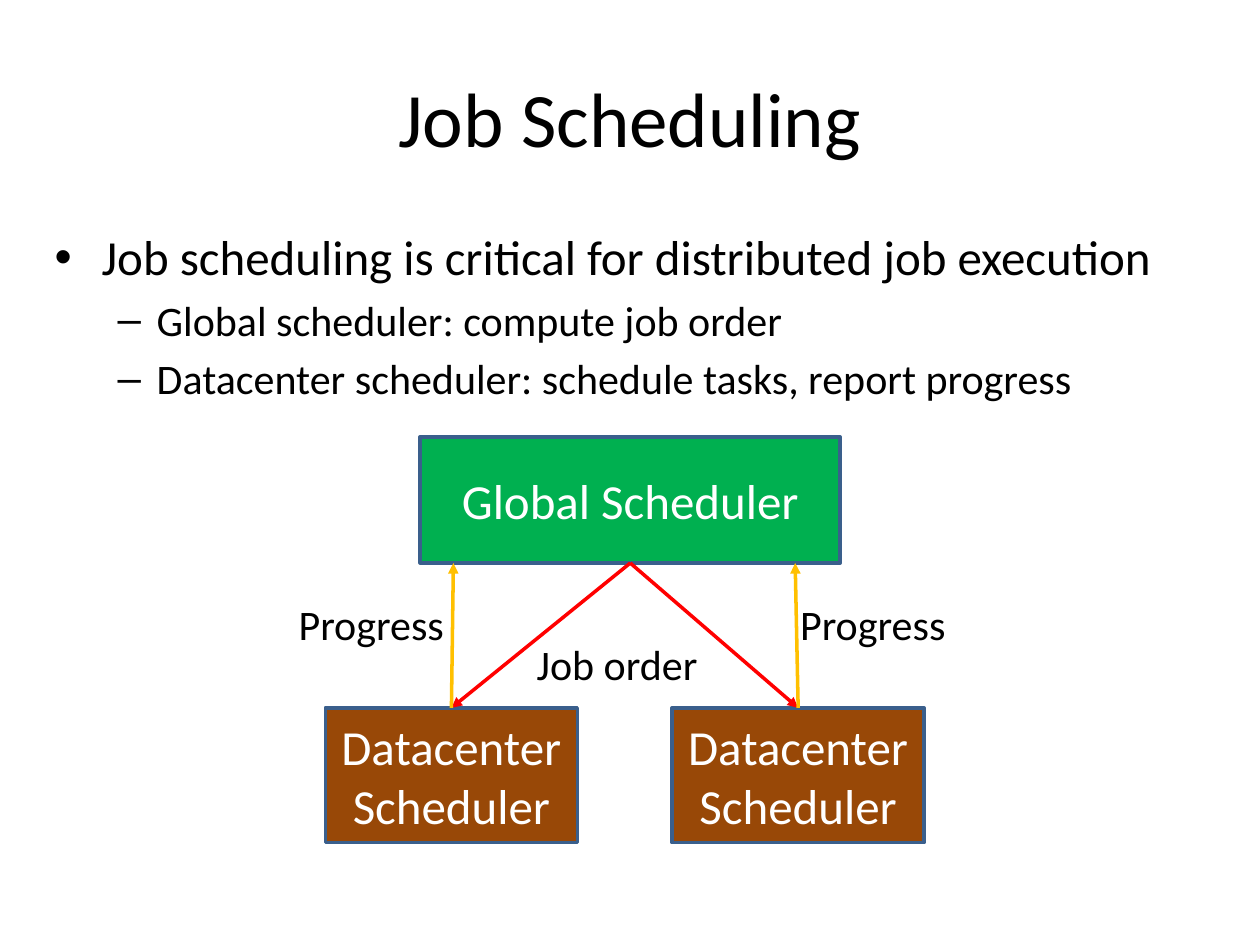
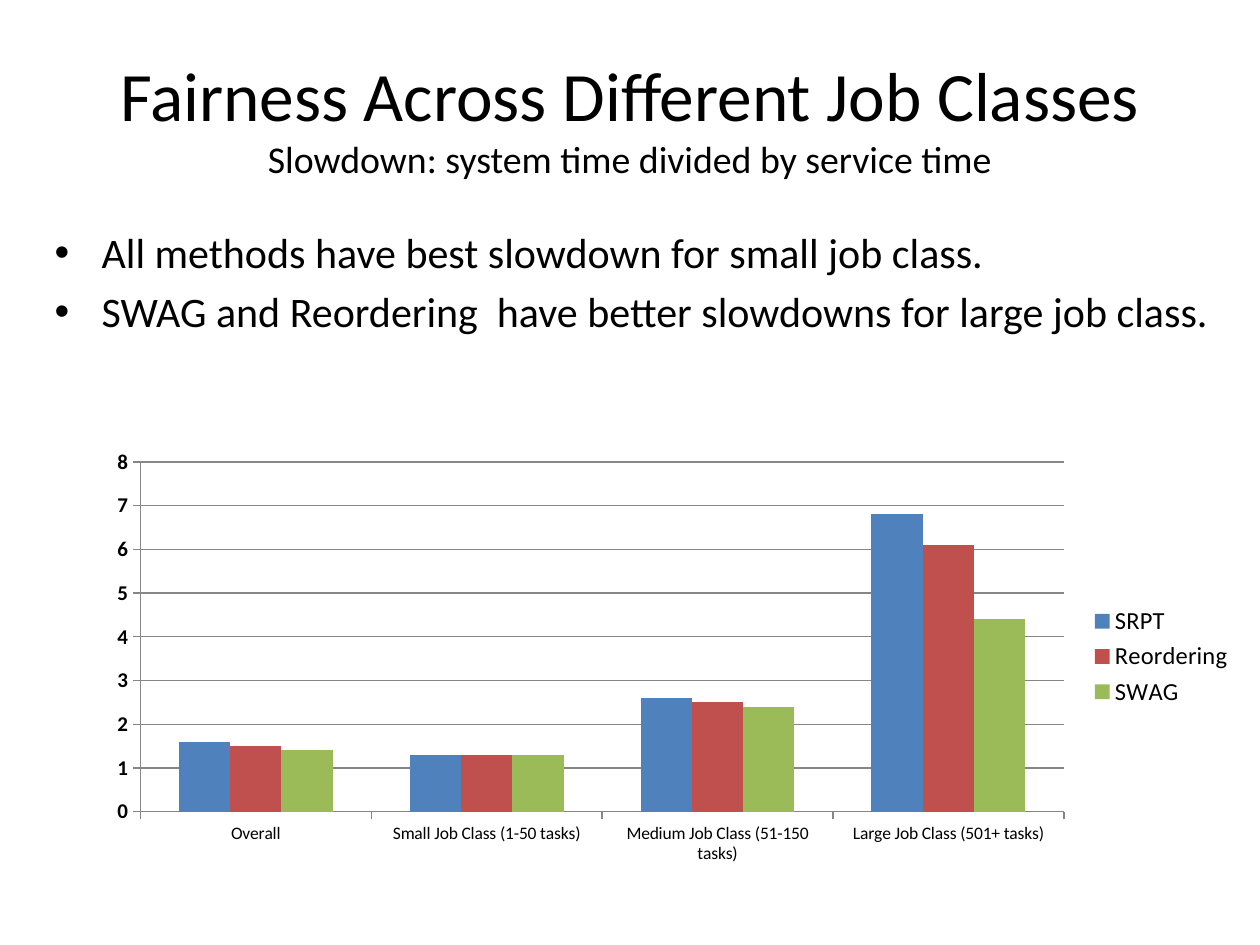
from dataclasses import dataclass

from lxml import etree
from pptx import Presentation
from pptx import util as u
from pptx.chart.data import CategoryChartData
from pptx.dml.color import RGBColor
from pptx.enum import chart as ch
from pptx.enum import shapes, text
from pptx.oxml import ns


@dataclass(frozen=True)
class Theme:
    font: str = "Calibri"
    ink: str = "000000"
    white: str = "FFFFFF"
    outline: str = "3A5F8C"
    global_fill: str = "00B050"
    datacenter_fill: str = "984807"
    order: str = "FF0000"
    progress: str = "FFC000"
    grid: str = "868686"
    series: tuple[str, ...] = ("4F81BD", "C0504D", "9BBB59")
    title: float = 44
    long_title: float = 39.6
    subtitle: float = 21.6
    lead: float = 28
    body: float = 24
    legend: float = 14
    value: float = 12
    category: float = 10
    line: float = 2


@dataclass(frozen=True)
class Area:
    """Left, top, width and height in centimetres."""
    x: float
    y: float
    w: float
    h: float

    def emu(self) -> tuple[u.Cm, ...]:
        return tuple(u.Cm(v) for v in (self.x, self.y, self.w, self.h))


@dataclass(frozen=True)
class Line:
    text: str
    size: float


@dataclass(frozen=True)
class Bullet:
    text: str
    size: float
    level: int = 0


@dataclass(frozen=True)
class Box:
    text: str
    area: Area
    fill: str


@dataclass(frozen=True)
class Label:
    text: str
    area: Area


@dataclass(frozen=True)
class BulletStyle:
    mark: str
    margin: float
    hang: float


T = Theme()
TITLE_AREA = Area(1.27, 0.76, 22.86, 3.18)
BULLETS = (BulletStyle("•", 0.95, 0.95), BulletStyle("–", 2.06, 0.79))


def set_all(obj, values: dict) -> None:
    for name, value in values.items():
        setattr(obj, name, value)


def set_font(font, size: float, color: str = T.ink, bold: bool = False) -> None:
    set_all(font, {"name": T.font, "size": u.Pt(size), "bold": bold})
    font.color.rgb = RGBColor.from_string(color)


def add_run(p, content: str, size: float, color: str = T.ink) -> None:
    r = p.add_run()
    r.text = content
    set_font(r.font, size, color)


def set_line(line, color: str, width: float = T.line) -> None:
    line.color.rgb = RGBColor.from_string(color)
    line.width = u.Pt(width)


def sub(parent, tag: str, **attrs: str):
    return etree.SubElement(parent, ns.qn(tag), attrs)


def add_slide(prs, lines: list[Line]):
    """Add a title-only slide; title lines are parted by line breaks."""
    s = prs.slides.add_slide(prs.slide_layouts[5])
    sp = s.shapes.title
    set_all(sp, dict(zip(("left", "top", "width", "height"), TITLE_AREA.emu())))
    tf = sp.text_frame
    set_all(tf, {"auto_size": text.MSO_AUTO_SIZE.NONE,
                 "vertical_anchor": text.MSO_ANCHOR.MIDDLE})
    p = tf.paragraphs[0]
    p.alignment = text.PP_ALIGN.CENTER
    for i, line in enumerate(lines):
        if i:
            p.add_line_break()
            sub(p._p[-1], "a:rPr", sz=str(round(lines[i - 1].size * 100)))
        add_run(p, line.text, line.size)
    return s


def add_text_frame(s, area: Area):
    tf = s.shapes.add_textbox(*area.emu()).text_frame
    tf.word_wrap = True
    return tf


def add_bullets(s, area: Area, bullets: list[Bullet]) -> None:
    tf = add_text_frame(s, area)
    for i, bullet in enumerate(bullets):
        p = tf.add_paragraph() if i else tf.paragraphs[0]
        p.level = bullet.level
        style = BULLETS[bullet.level]
        ppr = p._p.get_or_add_pPr()
        ppr.set("marL", str(u.Cm(style.margin)))
        ppr.set("indent", str(-u.Cm(style.hang)))
        sub(sub(ppr, "a:spcBef"), "a:spcPct", val="20000")
        sub(ppr, "a:buFont", typeface="Arial")
        sub(ppr, "a:buChar", char=style.mark)
        add_run(p, bullet.text, bullet.size)


def add_box(s, box: Box):
    sp = s.shapes.add_shape(shapes.MSO_SHAPE.RECTANGLE, *box.area.emu())
    sp.shadow.inherit = False
    sp.fill.solid()
    sp.fill.fore_color.rgb = RGBColor.from_string(box.fill)
    set_line(sp.line, T.outline)
    tf = sp.text_frame
    set_all(tf, {"word_wrap": True, "vertical_anchor": text.MSO_ANCHOR.MIDDLE})
    p = tf.paragraphs[0]
    p.alignment = text.PP_ALIGN.CENTER
    add_run(p, box.text, T.lead, T.white)
    return sp


def add_arrow(s, color: str, start, start_site: int, x: int = 0, y: int = 0,
              end=None, end_site: int = 0) -> None:
    """Draw an arrow from a box side to another box, or to the point x, y."""
    c = s.shapes.add_connector(shapes.MSO_CONNECTOR.STRAIGHT, x, y, x, y)
    c.begin_connect(start, start_site)
    if end is not None:
        c.end_connect(end, end_site)
    set_line(c.line, color)
    sub(c.line._get_or_add_ln(), "a:tailEnd", type="triangle")
    sub(c._element.spPr, "a:effectLst")


def add_label(s, label: Label) -> None:
    tf = add_text_frame(s, label.area)
    tf.auto_size = text.MSO_AUTO_SIZE.SHAPE_TO_FIT_TEXT
    add_run(tf.paragraphs[0], label.text, T.body)


def add_slowdown_chart(s, area: Area, categories: list[str],
                       slowdowns: dict[str, tuple[float, ...]]) -> None:
    data = CategoryChartData()
    data.categories = categories
    for name, values in slowdowns.items():
        data.add_series(name, values)
    chart = s.shapes.add_chart(ch.XL_CHART_TYPE.COLUMN_CLUSTERED, *area.emu(), data).chart
    set_font(chart.font, T.category)
    set_all(chart, {"has_title": False, "has_legend": True})
    set_all(chart.legend, {"position": ch.XL_LEGEND_POSITION.RIGHT,
                           "include_in_layout": False})
    set_font(chart.legend.font, T.legend)

    plot = chart.plots[0]
    set_all(plot, {"gap_width": 150, "overlap": 0, "vary_by_categories": False})
    for series, color in zip(plot.series, T.series):
        series.format.fill.solid()
        series.format.fill.fore_color.rgb = RGBColor.from_string(color)

    for axis in (chart.category_axis, chart.value_axis):
        axis.major_tick_mark = ch.XL_TICK_MARK.OUTSIDE
        set_line(axis.format.line, T.grid, 0.75)
    set_font(chart.category_axis.tick_labels.font, T.category)
    value_axis = chart.value_axis
    set_all(value_axis, {"minimum_scale": 0, "maximum_scale": 8, "major_unit": 1,
                         "has_major_gridlines": True})
    set_font(value_axis.tick_labels.font, T.value, bold=True)
    set_line(value_axis.major_gridlines.format.line, T.grid, 0.75)


def build_job_scheduling(prs) -> None:
    s = add_slide(prs, [Line("Job Scheduling", T.title)])
    add_bullets(s, Area(0.85, 4.45, 23.28, 12.57), [
        Bullet("Job scheduling is critical for distributed job execution", T.lead),
        Bullet("Global scheduler: compute job order", T.body, 1),
        Bullet("Datacenter scheduler: schedule tasks, report progress", T.body, 1),
    ])
    top = add_box(s, Box("Global Scheduler", Area(8.47, 8.81, 8.47, 2.54), T.global_fill))
    datacenters = [
        add_box(s, Box("Datacenter Scheduler", Area(x, 14.27, 5.08, 2.72), T.datacenter_fill))
        for x in (6.56, 13.55)
    ]
    for datacenter in datacenters:
        add_arrow(s, T.order, top, 2, end=datacenter)
    for datacenter, x in zip(datacenters, (9.14, 16.03)):
        add_arrow(s, T.progress, datacenter, 0, u.Cm(x), top.top + top.height)
    for content, x, y in (("Job order", 10.57, 12.75),
                          ("Progress", 5.77, 11.94),
                          ("Progress", 15.88, 11.94)):
        add_label(s, Label(content, Area(x, y, 3.78, 1.27)))


def build_fairness(prs) -> None:
    s = add_slide(prs, [
        Line("Fairness Across Different Job Classes", T.long_title),
        Line("Slowdown: system time divided by service time", T.subtitle),
    ])
    add_bullets(s, Area(0.85, 4.45, 23.92, 12.57), [
        Bullet("All methods have best slowdown for small job class.", T.body),
        Bullet("SWAG and Reordering  have better slowdowns for large job class.", T.body),
    ])
    add_slowdown_chart(
        s, Area(1.9, 8.89, 23.22, 8.69),
        ["Overall", "Small Job Class (1-50 tasks)",
         "Medium Job Class (51-150 tasks)", "Large Job Class (501+ tasks)"],
        {"SRPT": (1.6, 1.3, 2.6, 6.8),
         "Reordering": (1.5, 1.3, 2.5, 6.1),
         "SWAG": (1.4, 1.3, 2.4, 4.4)})


def main() -> None:
    prs = Presentation()
    set_all(prs, {"slide_width": u.Cm(25.4), "slide_height": u.Cm(19.05)})
    build_job_scheduling(prs)
    build_fairness(prs)
    prs.save("out.pptx")


if __name__ == "__main__":
    main()
